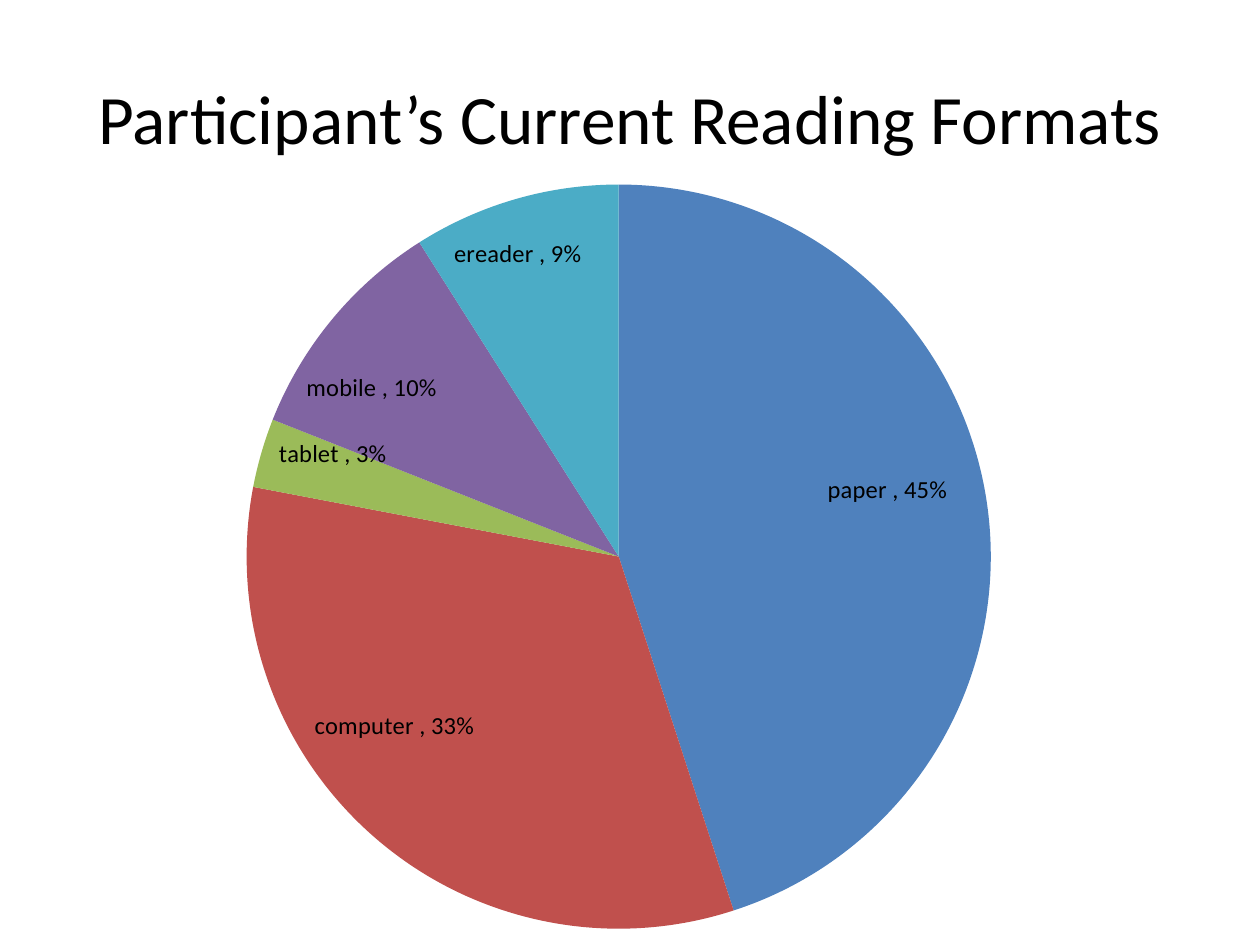
import copy
from dataclasses import dataclass

import lxml.etree
import pptx
import pptx.chart.data
import pptx.dml.color
import pptx.enum.chart
import pptx.enum.text
import pptx.oxml.ns
import pptx.util

Inches = pptx.util.Inches
Pt = pptx.util.Pt
RGBColor = pptx.dml.color.RGBColor
qn = pptx.oxml.ns.qn

FONT = "Calibri"
BLACK = RGBColor(0x00, 0x00, 0x00)
BLUE = RGBColor(0x4F, 0x81, 0xBD)
RED = RGBColor(0xC0, 0x50, 0x4D)
GREEN = RGBColor(0x9B, 0xBB, 0x59)
PURPLE = RGBColor(0x80, 0x64, 0xA2)
TEAL = RGBColor(0x4B, 0xAC, 0xC6)


@dataclass(frozen=True)
class ReadingFormat:
    """A slice; its label shift is given in fractions of the chart."""
    name: str
    share: float
    color: RGBColor
    shift_x: float
    shift_y: float


READING_FORMATS = [
    ReadingFormat("paper ", 0.45, BLUE, -0.03, -0.03),
    ReadingFormat("computer ", 0.33, RED, -0.06, -0.11),
    ReadingFormat("tablet ", 0.03, GREEN, 0.01, -0.02),
    ReadingFormat("mobile ", 0.10, PURPLE, -0.03, 0.06),
    ReadingFormat("ereader ", 0.09, TEAL, -0.06, 0.04),
]


def style_font(font, *, size: float, color: RGBColor = BLACK) -> None:
    font.name = FONT
    font.size = Pt(size)
    font.color.rgb = color


def write_text(frame, text: str, *, size: float, align, anchor) -> None:
    frame.word_wrap = True
    frame.vertical_anchor = anchor
    paragraph = frame.paragraphs[0]
    paragraph.alignment = align
    run = paragraph.add_run()
    run.text = text
    style_font(run.font, size=size)


def manual_layout(**settings):
    layout = lxml.etree.Element(qn("c:layout"))
    manual = lxml.etree.SubElement(layout, qn("c:manualLayout"))
    for tag, value in settings.items():
        lxml.etree.SubElement(manual, qn(f"c:{tag}")).set("val", str(value))
    return layout


def place_plot(chart, x: float, y: float, w: float, h: float) -> None:
    """Fix the inner plot area, given in fractions of the chart."""
    plot_area = chart.plots[0]._element.getparent()
    for old in plot_area.findall(qn("c:layout")):
        plot_area.remove(old)
    plot_area.insert(0, manual_layout(layoutTarget="inner", xMode="edge",
                                      yMode="edge", x=x, y=y, w=w, h=h))


def label_slices(series, formats: list[ReadingFormat]) -> None:
    labels = series.data_labels
    labels.show_category_name = True
    labels.show_value = True
    labels.show_percentage = False
    labels.number_format = "0%"
    labels.number_format_is_linked = False
    labels.position = pptx.enum.chart.XL_LABEL_POSITION.INSIDE_END
    style_font(labels.font, size=14)
    group = labels._element
    for leader in group.findall(qn("c:showLeaderLines")):
        group.remove(leader)
    separator = lxml.etree.SubElement(group, qn("c:separator"))
    separator.text = ", "

    shared = list(group)
    for index, item in enumerate(formats):
        label = lxml.etree.Element(qn("c:dLbl"))
        lxml.etree.SubElement(label, qn("c:idx")).set("val", str(index))
        label.append(manual_layout(x=item.shift_x, y=item.shift_y))
        label.extend(copy.deepcopy(part) for part in shared)
        group.insert(index, label)
    lxml.etree.SubElement(group, qn("c:showLeaderLines")).set("val", "0")


def add_format_pie(slide, formats: list[ReadingFormat]) -> None:
    data = pptx.chart.data.CategoryChartData(number_format="0%")
    data.categories = [item.name for item in formats]
    data.add_series("Series 1", [item.share for item in formats])
    chart = slide.shapes.add_chart(
        pptx.enum.chart.XL_CHART_TYPE.PIE,
        Inches(0.83), Inches(1.08), Inches(8.33), Inches(6.42), data).chart
    chart.has_title = False
    chart.has_legend = False
    style_font(chart.font, size=10)
    pie = chart.plots[0]
    pie.vary_by_categories = True
    series = pie.series[0]
    for index, item in enumerate(formats):
        fill = series.points[index].format.fill
        fill.solid()
        fill.fore_color.rgb = item.color
    label_slices(series, formats)
    place_plot(chart, x=0.13, y=0.06, w=0.72, h=0.92)


def main() -> None:
    deck = pptx.Presentation()
    deck.slide_width, deck.slide_height = Inches(10), Inches(7.5)
    slide = deck.slides.add_slide(deck.slide_layouts[5])
    title = slide.shapes.title
    title.left, title.top = Inches(0.5), Inches(0.3)
    title.width, title.height = Inches(9), Inches(1.25)
    write_text(title.text_frame, "Participant’s Current Reading Formats",
               size=39.6, align=pptx.enum.text.PP_ALIGN.CENTER,
               anchor=pptx.enum.text.MSO_ANCHOR.MIDDLE)
    add_format_pie(slide, READING_FORMATS)
    deck.save("out.pptx")


if __name__ == "__main__":
    main()
